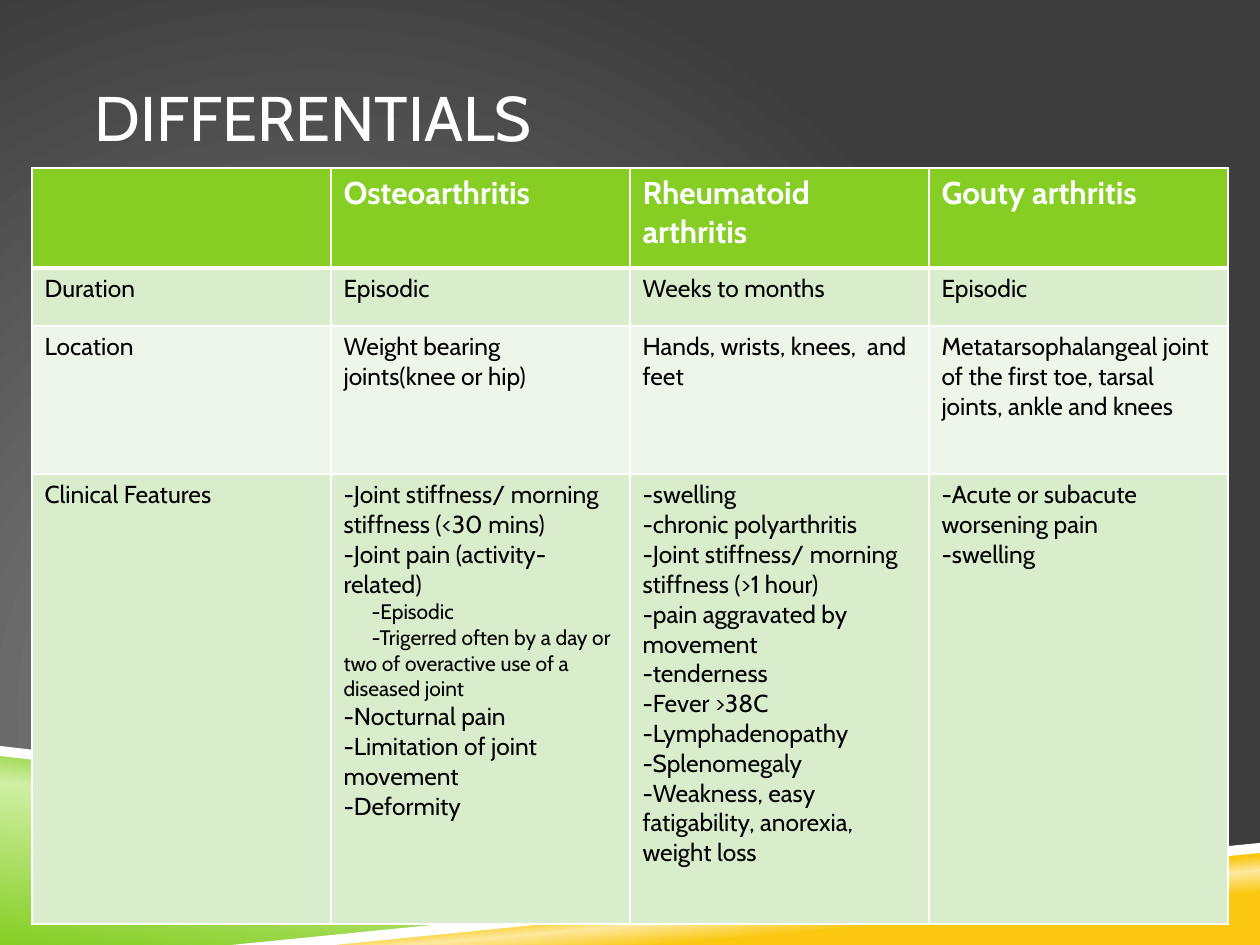
"""Build a slide comparing the differentials of arthritis in a table."""
import pptx
import pptx.util
import pptx.dml.color
import pptx.enum.text
import pptx.oxml
import pptx.oxml.ns

SCALE = 914400 // 126
FONT = "Cabin"
COLORS = {
    "white": "FFFFFF", "black": "000000", "green": "86CE24", "pale green": "CFEFA4",
    "yellow": "FAC810", "pale yellow": "FDE99F", "gray": "878787", "charcoal": "3D3D3D",
    "band dark": "D9EDCD", "band light": "EDF6E8",
}
TITLE = "DIFFERENTIALS"
SUB = "sub:"
ROWS = [
    [[], ["Osteoarthritis"], ["Rheumatoid arthritis"], ["Gouty arthritis"]],
    [["Duration"], ["Episodic"], ["Weeks to months"], ["Episodic"]],
    [["Location"], ["Weight bearing joints(knee or hip)"],
     ["Hands, wrists, knees,  and feet"],
     ["Metatarsophalangeal joint of the first toe, tarsal joints, ankle and knees"]],
    [["Clinical Features"],
     ["-Joint stiffness/ morning stiffness (<30 mins)",
      "-Joint pain (activity-related)",
      SUB + "-Episodic",
      SUB + "-Trigerred often by a day or two of overactive use of a diseased joint",
      "-Nocturnal pain",
      "-Limitation of joint movement",
      "-Deformity"],
     ["-swelling",
      "-chronic polyarthritis",
      "-Joint stiffness/ morning stiffness (>1 hour)",
      "-pain aggravated by movement",
      "-tenderness",
      "-Fever >38C",
      "-Lymphadenopathy",
      "-Splenomegaly",
      "-Weakness, easy fatigability, anorexia, weight loss"],
     ["-Acute or subacute worsening pain", "-swelling"]],
]
ROW_HEIGHTS = [100, 58, 148, 450]
ROW_FILLS = ["green", "band dark", "band light", "band dark"]
COLUMN_WIDTH = 299
TABLE_LEFT, TABLE_TOP = 32, 168
SUB_INDENT = 28

BACKGROUND_STOPS = [(0, "gray"), (100, "charcoal")]
BACKGROUND_PATH = ('<a:path path="circle"><a:fillToRect l="50000" t="100000" '
                   'r="100000" b="50000"/></a:path>')
WAVES = [
    ([(0, 752), (998, 872), (252, 945), (0, 945)],
     [(0, "green"), (52, "pale green"), (66, "green")], 277),
    ([(249, 945), (1260, 847), (1260, 945)],
     [(28, "yellow"), (40, "pale yellow"), (48, "yellow")], 265),
    ([(0, 746), (0, 756), (995, 873), (1048, 869)], None, None),
    ([(1260, 843), (232, 945), (335, 945), (1260, 853)], None, None),
]


def px(value):
    return pptx.util.Emu(value * SCALE)


def rgb(name):
    return pptx.dml.color.RGBColor.from_string(COLORS[name])


def set_gradient(holder, stops, direction):
    """Replace the solid fill of an element by a gradient."""
    stop_xml = "".join(
        f'<a:gs pos="{position * 1000}"><a:srgbClr val="{COLORS[color]}"/></a:gs>'
        for position, color in stops)
    gradient = pptx.oxml.parse_xml(
        f'<a:gradFill {pptx.oxml.ns.nsdecls("a")} rotWithShape="1">'
        f'<a:gsLst>{stop_xml}</a:gsLst>{direction}</a:gradFill>')
    solid = holder.find(pptx.oxml.ns.qn("a:solidFill"))
    holder.replace(solid, gradient)


def add_wave(slide, points, stops, angle):
    builder = slide.shapes.build_freeform(*points[0], scale=SCALE)
    builder.add_line_segments(points[1:], close=True)
    shape = builder.convert_to_shape()
    shape.shadow.inherit = False
    shape.line.fill.background()
    shape.fill.solid()
    shape.fill.fore_color.rgb = rgb("white")
    if stops:
        set_gradient(shape.element.spPr, stops, f'<a:lin ang="{angle * 60000}" scaled="0"/>')


def write_text(text_frame, lines, size=14, sub_size=12, color="black", bold=False):
    """Write one paragraph for each line, with sub-items smaller and indented."""
    for index, line in enumerate(lines):
        paragraph = text_frame.paragraphs[0] if index == 0 else text_frame.add_paragraph()
        is_sub = line.startswith(SUB)
        if is_sub:
            properties = paragraph._p.get_or_add_pPr()
            properties.set("marL", "0")
            properties.set("indent", str(px(SUB_INDENT)))
        run = paragraph.add_run()
        run.text = line.removeprefix(SUB)
        run.font.name = FONT
        run.font.size = pptx.util.Pt(sub_size if is_sub else size)
        run.font.bold = bold
        run.font.color.rgb = rgb(color)


def set_borders(cell, **widths):
    properties = cell._tc.get_or_add_tcPr()
    for index, side in enumerate("LRTB"):
        width = pptx.util.Pt(widths.get(side, 1))
        properties.insert(index, pptx.oxml.parse_xml(
            f'<a:ln{side} {pptx.oxml.ns.nsdecls("a")} w="{width}"><a:solidFill>'
            f'<a:srgbClr val="{COLORS["white"]}"/></a:solidFill></a:ln{side}>'))


def add_comparison(slide):
    columns = len(ROWS[0])
    table = slide.shapes.add_table(
        len(ROWS), columns, px(TABLE_LEFT), px(TABLE_TOP),
        px(COLUMN_WIDTH * columns), px(sum(ROW_HEIGHTS))).table
    for column in table.columns:
        column.width = px(COLUMN_WIDTH)
    for row_index, row in enumerate(ROWS):
        table.rows[row_index].height = px(ROW_HEIGHTS[row_index])
        header = row_index == 0
        for column_index, lines in enumerate(row):
            cell = table.cell(row_index, column_index)
            cell.fill.solid()
            cell.fill.fore_color.rgb = rgb(ROW_FILLS[row_index])
            set_borders(cell, B=3 if header else 1, T=3 if row_index == 1 else 1)
            write_text(cell.text_frame, lines, size=18 if header else 14,
                       color="white" if header else "black", bold=header)


def main():
    presentation = pptx.Presentation()
    presentation.slide_width, presentation.slide_height = px(1260), px(945)
    slide = presentation.slides.add_slide(presentation.slide_layouts[6])
    slide.background.fill.solid()
    slide.background.fill.fore_color.rgb = rgb("charcoal")
    background = slide.element.find(".//" + pptx.oxml.ns.qn("p:bgPr"))
    set_gradient(background, BACKGROUND_STOPS, BACKGROUND_PATH)
    for points, stops, angle in WAVES:
        add_wave(slide, points, stops, angle)

    title = slide.shapes.add_textbox(px(95), px(38), px(1071), px(157)).text_frame
    title.word_wrap = True
    title.margin_left = title.margin_right = 0
    title.vertical_anchor = pptx.enum.text.MSO_ANCHOR.MIDDLE
    write_text(title, [TITLE], size=36, color="white")
    add_comparison(slide)
    presentation.save("out.pptx")


if __name__ == "__main__":
    main()
